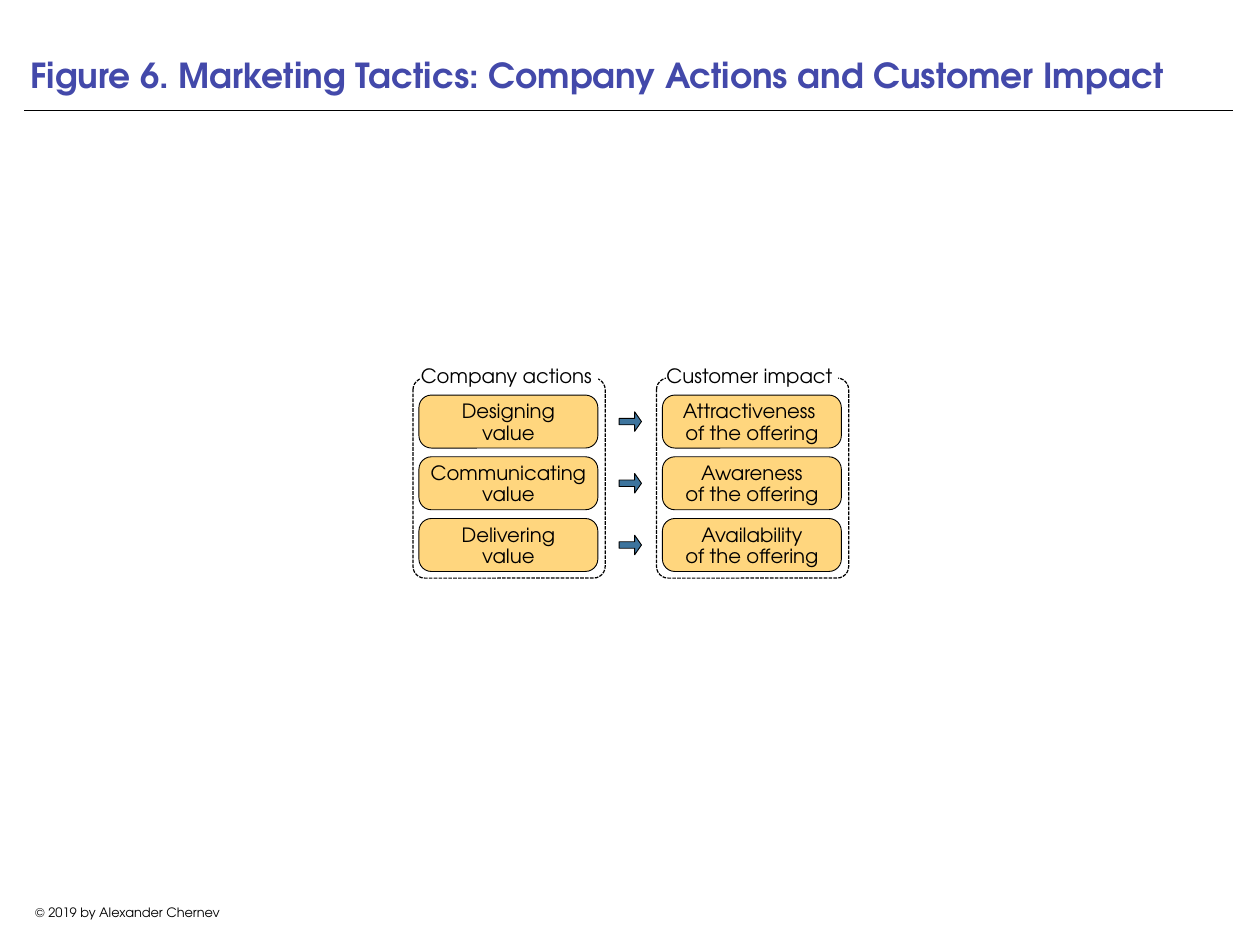
"""Build the slide on marketing tactics: company actions and customer impact."""
from dataclasses import dataclass

import pptx
import pptx.dml.color
import pptx.enum.dml
import pptx.enum.shapes
import pptx.enum.text
import pptx.oxml.ns
import pptx.util
from pptx.util import Cm

SHAPES = pptx.enum.shapes.MSO_SHAPE
ALIGN = pptx.enum.text.PP_ALIGN
ANCHOR = pptx.enum.text.MSO_ANCHOR


@dataclass(frozen=True)
class Theme:
    """Hold the colours, font and type sizes of the slide."""
    font: str = "TeX Gyre Adventor"
    title_colour: str = "4349AA"
    ink: str = "000000"
    paper: str = "FFFFFF"
    box: str = "FFD67E"
    arrow: str = "3D749D"
    title_size: float = 28
    body_size: float = 16
    footer_size: float = 10.5


THEME = Theme()
COLUMNS = (
    ("Company actions ", 12.04, 5.11,
     ("Designing\nvalue", "Communicating\nvalue", "Delivering\nvalue")),
    ("Customer impact ", 19.1, 4.93,
     ("Attractiveness \nof the offering", "Awareness\nof the offering",
      "Availability\nof the offering")),
)
COLUMN_LEFT, COLUMN_PITCH = 12.01, 6.98
ROW_TOP, ROW_PITCH = 11.33, 1.77


def colour(code):
    """Turn a hexadecimal code into a colour."""
    return pptx.dml.color.RGBColor.from_string(code)


def write_text(shape, text, *, size=THEME.body_size, ink=THEME.ink, bold=False,
               align=ALIGN.CENTER, anchor=ANCHOR.BOTTOM, spacing=None,
               inset=0, wrap=True):
    """Write one paragraph per line of text into a shape."""
    frame = shape.text_frame
    frame.word_wrap = wrap
    frame.vertical_anchor = anchor
    if inset is not None:
        frame.margin_left = frame.margin_right = Cm(inset)
        frame.margin_top = frame.margin_bottom = Cm(inset)
    frame.text = text
    for paragraph in frame.paragraphs:
        paragraph.alignment = align
        paragraph.line_spacing = spacing
        font = paragraph.runs[0].font
        font.name, font.size, font.bold = THEME.font, pptx.util.Pt(size), bold
        font.color.rgb = colour(ink)


def add_text_box(slide, text, left, top, width, height, **text_format):
    """Add a text box with formatted text."""
    shape = slide.shapes.add_textbox(Cm(left), Cm(top), Cm(width), Cm(height))
    write_text(shape, text, **text_format)


def add_figure(slide, kind, left, top, width, height, *, fill=None, line=None,
               adjustments=()):
    """Add a preset shape with its fill and outline width."""
    shape = slide.shapes.add_shape(kind, Cm(left), Cm(top), Cm(width), Cm(height))
    shape.shadow.inherit = False
    for index, value in enumerate(adjustments):
        shape.adjustments[index] = value
    if fill:
        shape.fill.solid()
        shape.fill.fore_color.rgb = colour(fill)
    else:
        shape.fill.background()
    if line:
        shape.line.color.rgb = colour(THEME.ink)
        shape.line.width = pptx.util.Pt(line)
    else:
        shape.line.fill.background()
    return shape


def add_rule(slide, left, right, top):
    """Add the thin line below the title."""
    rule = slide.shapes.add_connector(
        pptx.enum.shapes.MSO_CONNECTOR.STRAIGHT, Cm(left), Cm(top), Cm(right), Cm(top))
    rule.line.color.rgb = colour(THEME.ink)
    rule.line.width = pptx.util.Pt(0.5)
    properties = rule._element.spPr
    properties.append(properties.makeelement(pptx.oxml.ns.qn("a:effectLst"), {}))


def add_column(slide, left, heading, heading_left, heading_width, entries):
    """Add a dashed frame with its boxes and its heading."""
    frame = add_figure(slide, SHAPES.ROUNDED_RECTANGLE, left - 0.17, 10.84, 5.51, 5.74,
                       line=1, adjustments=(0.061,))
    frame.line.dash_style = pptx.enum.dml.MSO_LINE.SQUARE_DOT
    for row, entry in enumerate(entries):
        box = add_figure(slide, SHAPES.ROUNDED_RECTANGLE, left, ROW_TOP + row * ROW_PITCH,
                         5.13, 1.52, fill=THEME.box, line=0.75, adjustments=(0.235,))
        write_text(box, entry, spacing=0.9)
    label = add_figure(slide, SHAPES.RECTANGLE, heading_left, 10.34, heading_width, 0.76,
                       fill=THEME.paper)
    write_text(label, heading, spacing=0.8)


def add_arrow(slide, row):
    """Add the arrow that joins the two boxes of a row."""
    add_figure(slide, SHAPES.RIGHT_ARROW, 17.75, ROW_TOP + row * ROW_PITCH + 0.48,
               0.64, 0.56, fill=THEME.arrow, line=0.75, adjustments=(0.329, 0.347))


def main():
    """Build and save the presentation."""
    presentation = pptx.Presentation()
    presentation.slide_width, presentation.slide_height = Cm(36.12), Cm(27.1)
    slide = presentation.slides.add_slide(presentation.slide_layouts[6])
    add_text_box(slide, "© 2019 by Alexander Chernev", 0.69, 25.81, 5.94, 0.71,
                 size=THEME.footer_size, anchor=ANCHOR.TOP, inset=None, wrap=False)
    add_rule(slide, 0.69, 35.36, 3.15)
    add_text_box(slide, "Figure 6. Marketing Tactics: Company Actions and Customer Impact",
                 0.69, 0, 34.65, 2.92, size=THEME.title_size, ink=THEME.title_colour,
                 bold=True, align=ALIGN.LEFT, inset=0.18)
    for index, column in enumerate(COLUMNS):
        add_column(slide, COLUMN_LEFT + index * COLUMN_PITCH, *column)
    for row in range(3):
        add_arrow(slide, row)
    presentation.save("out.pptx")


if __name__ == "__main__":
    main()
